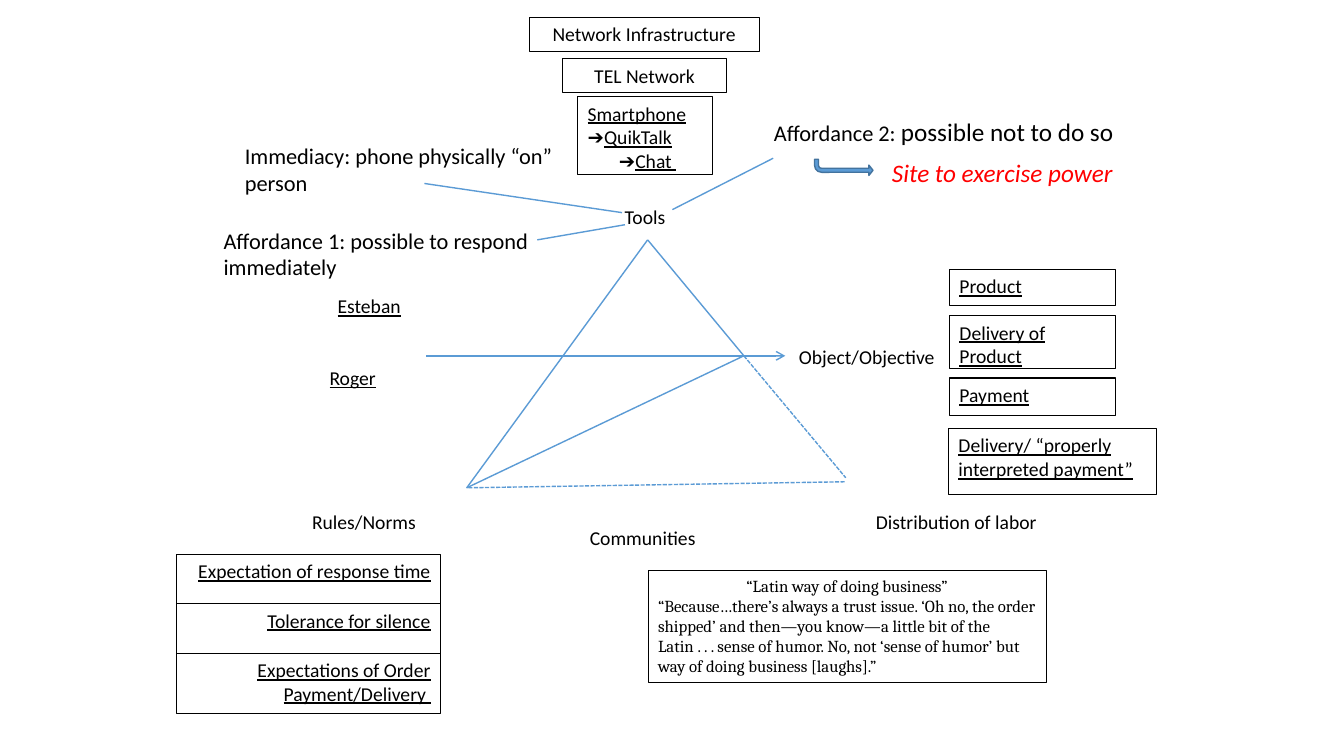
from dataclasses import dataclass

from lxml import etree
from pptx import Presentation
from pptx.dml.color import RGBColor
from pptx.enum.dml import MSO_LINE
from pptx.enum.shapes import MSO_CONNECTOR, MSO_SHAPE
from pptx.enum.text import MSO_ANCHOR, PP_ALIGN
from pptx.oxml.ns import qn
from pptx.slide import Slide
from pptx.util import Inches, Pt

BLACK = RGBColor(0, 0, 0)
RED = RGBColor(0xFF, 0, 0)
BLUE = RGBColor(0x5B, 0x9B, 0xD5)
NAVY = RGBColor(0x43, 0x73, 0x9E)
LEFT, MID, RIGHT = PP_ALIGN.LEFT, PP_ALIGN.CENTER, PP_ALIGN.RIGHT
TOP = MSO_ANCHOR.TOP
RECT, BENT = MSO_SHAPE.RECTANGLE, MSO_SHAPE.BENT_ARROW
STRAIGHT = MSO_CONNECTOR.STRAIGHT
DASH = MSO_LINE.SQUARE_DOT
WIDE, HIGH = Inches(13.333), Inches(7.5)
COL, ROW = WIDE / 100, HIGH / 100

Point = tuple[float, float]
Area = tuple[float, float, float, float]


@dataclass(frozen=True)
class Span:
    text: str
    face: str | None = None
    size: float | None = None
    under: bool | None = None


@dataclass(frozen=True)
class Para:
    spans: tuple[Span, ...]
    align: PP_ALIGN = LEFT
    indent: float = 0


@dataclass(frozen=True)
class Label:
    area: Area
    text: str | tuple[Para, ...]
    align: PP_ALIGN = LEFT
    under: bool | None = None
    frame: bool = False
    size: float | None = 14
    face: str | None = "Calibri"
    color: RGBColor = BLACK
    slant: bool | None = None


@dataclass(frozen=True)
class Edge:
    start: Point
    end: Point
    dash: bool = False
    head: bool = False


APEX, GOAL, BASE = (48.19, 31.73), (55.35, 47.07), (34.73, 64.53)
EDGES = [
    Edge(GOAL, (62.93, 63.2), dash=True),
    Edge((62.85, 63.73), BASE, dash=True),
    Edge(BASE, GOAL),
    Edge(GOAL, (31.73, 47.07)),
    Edge(GOAL, (58.43, 47.07), head=True),
    Edge(APEX, BASE),
    Edge(APEX, GOAL),
    Edge((31.58, 24.27), (46.28, 28.13)),
    Edge((39.98, 31.73), (46.5, 29.73)),
    Edge((50.03, 27.73), (57.53, 20.93)),
]

ARROW = Span("➔", "Arial")
PHONE = (
    Para((Span("Smartphone", "Calibri", under=True),)),
    Para((ARROW, Span("QuikTalk", "Calibri", under=True), Span(" ", "Calibri"))),
    Para((ARROW, Span("Chat ", "Calibri", under=True)), indent=0.31),
)
CHOICE = (Para((Span("Affordance 2: ", size=16), Span("possible not to do so", size=18))),)
OBJECT = (Para((Span("Object/Objective", size=14), Span(" ", size=11)), MID),)
QUOTE = (
    Para((Span("“Latin way of doing business”"),), MID),
    Para((Span("“Because…there’s always a trust issue. ‘Oh no, the order shipped’ "
               "and then—you know—a little bit of the Latin . . . sense of humor. "
               "No, not ‘sense of humor’ but way of doing business [laughs].”"),)),
)

GOALS = [
    Label(area, text, under=True, frame=True)
    for area, text in (
        ((70.65, 35.6, 12.38, 4.8), "Product"),
        ((70.65, 41.73, 12.38, 7.07), "Delivery of Product"),
        ((70.65, 50, 12.38, 4.93), "Payment"),
        ((70.58, 56.67, 15.45, 8.8), "Delivery/ “properly interpreted payment”"),
    )
]
NORMS = [
    Label((13.13, 73.33 + 6.53 * step, 19.65, tall), text, RIGHT, under=True, frame=True)
    for step, (tall, text) in enumerate((
        (6.53, "Expectation of response time"),
        (6.53, "Tolerance for silence"),
        (8, "Expectations of Order Payment/Delivery "),
    ))
]
LABELS = [
    Label((39.38, 2.27, 17.1, 4.53), "Network Infrastructure", MID, frame=True),
    Label((41.85, 7.73, 12.23, 4.53), "TEL Network", MID, frame=True),
    Label((42.98, 12.8, 10.05, 10.27), PHONE, frame=True, face=None),
    Label((45.08, 26.4, 6.15, 4.4), "Tools ", MID),
    Label((24.38, 38.27, 7.2, 6.53), "Esteban", under=True),
    Label((23.78, 47.73, 6.15, 6.53), "Roger", under=True),
    Label((58.43, 44.93, 12.38, 6.53), OBJECT, size=None),
    Label((22.43, 66.8, 9.3, 6.53), "Rules/Norms", MID),
    Label((42.53, 68.93, 10.58, 6.53), "Communities", MID),
    Label((63.6, 66.8, 15.45, 6.53), "Distribution of labor ", MID),
    Label((17.48, 18.13, 24.98, 8.53), "Immediacy: phone physically “on” person", size=16),
    Label((15.9, 29.33, 26.25, 8.53), "Affordance 1: possible to respond immediately", size=16),
    Label((56.85, 14.67, 28.13, 5.33), CHOICE, size=None),
    Label((65.63, 20.13, 18.6, 5.33), "Site to exercise power", size=18, color=RED, slant=True),
    Label((48.23, 75.47, 29.63, 14.8), QUOTE, frame=True, size=12, face="Cambria"),
    *GOALS,
    *NORMS,
]


def place(area: Area) -> tuple[int, ...]:
    return tuple(round(part * unit) for part, unit in zip(area, (COL, ROW, COL, ROW)))


def draw_edge(slide: Slide, edge: Edge) -> None:
    line = slide.shapes.add_connector(STRAIGHT, *place(edge.start + edge.end))
    line.line.color.rgb = BLUE
    line.line.width = Pt(1)
    if edge.dash:
        line.line.dash_style = DASH
    if edge.head:
        etree.SubElement(line.line._get_or_add_ln(), qn("a:tailEnd"), type="arrow")
    etree.SubElement(line._element.spPr, qn("a:effectLst"))


def draw_label(slide: Slide, label: Label) -> None:
    if label.frame:
        shape = slide.shapes.add_shape(RECT, *place(label.area))
        shape.shadow.inherit = False
        shape.fill.background()
        shape.line.color.rgb = BLACK
        shape.line.width = Pt(0.75)
    else:
        shape = slide.shapes.add_textbox(*place(label.area))
    frame = shape.text_frame
    frame.word_wrap = True
    frame.vertical_anchor = TOP
    paras = label.text
    if isinstance(paras, str):
        paras = (Para((Span(paras),), label.align),)
    for index, para in enumerate(paras):
        body = frame.paragraphs[0] if index == 0 else frame.add_paragraph()
        body.alignment = para.align
        if para.indent:
            body._p.get_or_add_pPr().set("indent", str(Inches(para.indent)))
        font = body.font
        font.name, font.underline, font.italic = label.face, label.under, label.slant
        font.size = Pt(label.size) if label.size else None
        font.color.rgb = label.color
        for span in para.spans:
            run = body.add_run()
            run.text = span.text
            if span.face:
                run.font.name = span.face
            if span.size:
                run.font.size = Pt(span.size)
            if span.under:
                run.font.underline = True


def draw_turn(slide: Slide, area: Area) -> None:
    turn = slide.shapes.add_shape(BENT, *place(area))
    turn.shadow.inherit = False
    turn.rotation = 180
    turn._element.spPr.xfrm.set("flipH", "1")
    for index, value in enumerate((0.25, 0.32, 0.25, 0.44)):
        turn.adjustments[index] = value
    turn.fill.solid()
    turn.fill.fore_color.rgb = BLUE
    turn.line.color.rgb = NAVY
    turn.line.width = Pt(1)


def main() -> None:
    deck = Presentation()
    deck.slide_width, deck.slide_height = WIDE, HIGH
    slide = deck.slides.add_slide(deck.slide_layouts[6])
    for edge in EDGES:
        draw_edge(slide, edge)
    for label in LABELS:
        draw_label(slide, label)
    draw_turn(slide, (60.6, 21.07, 4.35, 2.13))
    deck.save("out.pptx")


if __name__ == "__main__":
    main()
